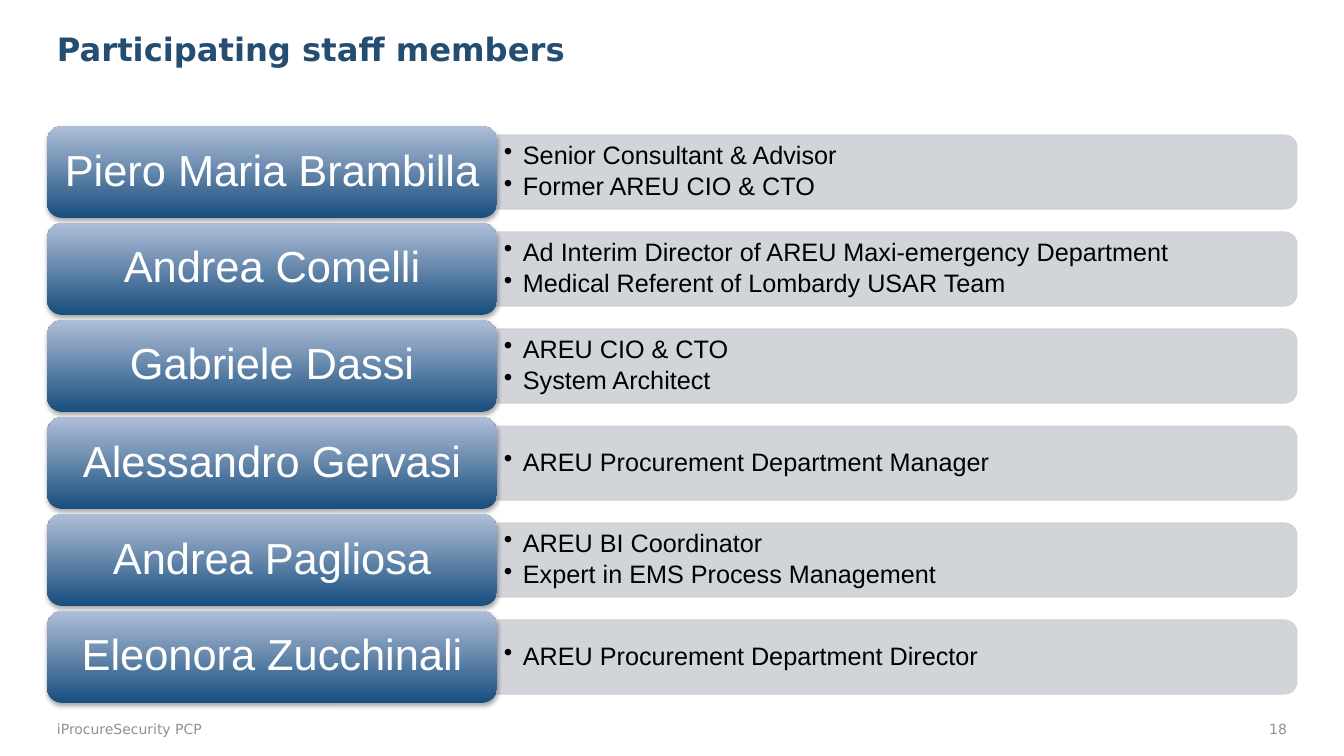
import pptx
import pptx.util
import pptx.dml.color
import pptx.enum.shapes
import pptx.enum.text
import pptx.oxml
import pptx.oxml.ns
from lxml import etree

SCALE = 914400 / 100.8
COLORS = {
    "title": "244D72",
    "footer": "919191",
    "bar": "CDD0D5",
    "name_bottom": "184E7E",
    "name_top": "AFBED7",
    "name_text": "FFFFFF",
    "role_text": "000000",
    "shadow": "000000",
}
ALIGN = pptx.enum.text.PP_ALIGN
SHAPES = pptx.enum.shapes.MSO_SHAPE
qn = pptx.oxml.ns.qn
STAFF = [
    ("Piero Maria Brambilla", ["Senior Consultant & Advisor", "Former AREU CIO & CTO"]),
    ("Andrea Comelli", ["Ad Interim Director of AREU Maxi-emergency Department",
                        "Medical Referent of Lombardy USAR Team"]),
    ("Gabriele Dassi", ["AREU CIO & CTO", "System Architect"]),
    ("Alessandro Gervasi", ["AREU Procurement Department Manager"]),
    ("Andrea Pagliosa", ["AREU BI Coordinator", "Expert in EMS Process Management"]),
    ("Eleonora Zucchinali", ["AREU Procurement Department Director"]),
]
ROW_PITCH = 97


def px(*lengths):
    return [pptx.util.Emu(round(length * SCALE)) for length in lengths]


def write(shape, lines, font, size, color, align, inset_x, inset_y, spacing=1.0, bullet=False):
    frame = shape.text_frame
    frame.word_wrap = True
    frame.auto_size = pptx.enum.text.MSO_AUTO_SIZE.NONE
    frame.vertical_anchor = pptx.enum.text.MSO_ANCHOR.MIDDLE
    frame.margin_left, frame.margin_right = px(inset_x, inset_x)
    frame.margin_top, frame.margin_bottom = px(inset_y, inset_y)
    frame.text = "\n".join(lines)
    for paragraph in frame.paragraphs:
        paragraph.alignment = align
        paragraph.line_spacing = spacing
        if bullet:
            paragraph.space_after = pptx.util.Pt(3)
            properties = paragraph._p.get_or_add_pPr()
            indent = px(19)[0]
            properties.set("marL", str(indent))
            properties.set("indent", str(-indent))
            etree.SubElement(properties, qn("a:buChar")).set("char", "•")
        paragraph.font.name = font
        paragraph.font.size = pptx.util.Pt(size)
        paragraph.font.color.rgb = pptx.dml.color.RGBColor.from_string(COLORS[color])


presentation = pptx.Presentation()
presentation.slide_width, presentation.slide_height = px(1344, 756)
slide = presentation.slides.add_slide(presentation.slide_layouts[5])

title = slide.shapes.title
title.left, title.top, title.width, title.height = px(47, 30, 1026, 42)
write(title, ["Participating staff members"], "DejaVu Sans", 23, "title", ALIGN.LEFT, 10, 0, 0.9)
title.text_frame.paragraphs[0].font.bold = True

for text, left, width, align in [
    ("iProcureSecurity PCP", 47, 1166, ALIGN.LEFT),
    ("18", 1222, 75, ALIGN.RIGHT),
]:
    footer = slide.shapes.add_textbox(*px(left, 716, width, 25))
    write(footer, [text], "DejaVu Sans", 10, "footer", align, 10, 5)

for row, (name, roles) in enumerate(STAFF):
    offset = row * ROW_PITCH

    bar = slide.shapes.add_shape(SHAPES.ROUND_2_SAME_RECTANGLE, *px(860, offset - 228, 74, 800))
    bar.rotation = 90
    bar.shadow.inherit = False
    bar.fill.solid()
    bar.line.width = pptx.util.Pt(0.75)
    for paint in (bar.fill.fore_color, bar.line.color):
        paint.rgb = pptx.dml.color.RGBColor.from_string(COLORS["bar"])
    for color in bar._element.spPr.iter(qn("a:srgbClr")):
        etree.SubElement(color, qn("a:alpha")).set("val", "90000")

    role_box = slide.shapes.add_textbox(*px(497, 139 + offset, 796, 66))
    write(role_box, roles, "Arial", 18, "role_text", ALIGN.LEFT, 7, 4, 0.9, bullet=True)

    name_box = slide.shapes.add_shape(SHAPES.ROUNDED_RECTANGLE, *px(47, 126 + offset, 450, 92))
    name_box.fill.gradient()
    name_box.fill.gradient_angle = 90
    for stop, color in zip(name_box.fill.gradient_stops, ("name_bottom", "name_top")):
        stop.color.rgb = pptx.dml.color.RGBColor.from_string(COLORS[color])
    name_box.line.fill.background()
    name_box.shadow.inherit = False
    effects = name_box._element.spPr.find(qn("a:effectLst"))
    shadow = etree.SubElement(effects, qn("a:outerShdw"), blurRad=str(pptx.util.Pt(3.1)),
                              dist=str(pptx.util.Pt(1.8)), dir="5400000", rotWithShape="0")
    shadow_color = etree.SubElement(shadow, qn("a:srgbClr"), val=COLORS["shadow"])
    etree.SubElement(shadow_color, qn("a:alpha"), val="35000")
    write(name_box, [name], "Arial", 31, "name_text", ALIGN.CENTER, 6, 6, 0.9)

presentation.save("out.pptx")
